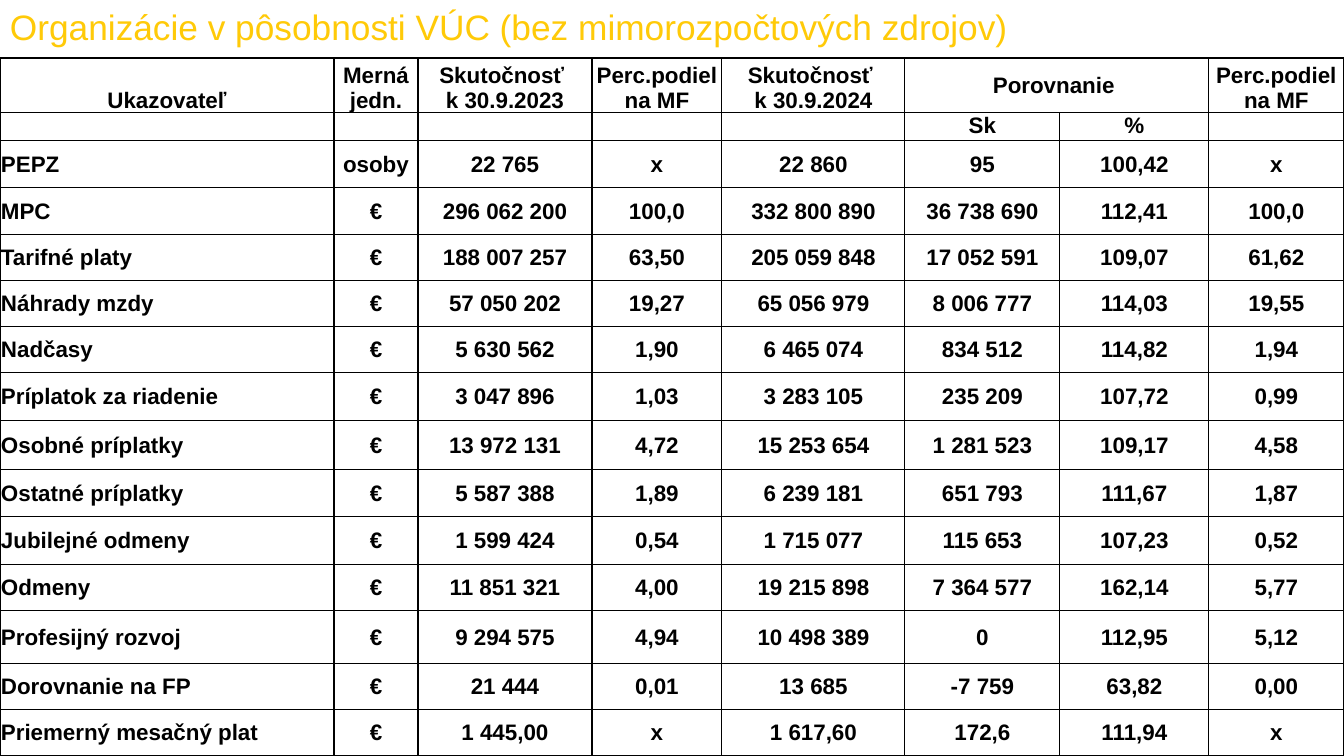
from lxml.etree import SubElement
from pptx import Presentation
from pptx.dml.color import RGBColor
from pptx.enum.text import MSO_ANCHOR, PP_ALIGN
from pptx.oxml.ns import qn
from pptx.util import Pt

EMU_PER_PX = 914400 / 100.8
COLUMN_WIDTHS = [334, 84, 174, 130, 183, 155, 149, 135]
ROW_HEIGHTS = [53, 27, 47, 47, 46, 46, 46, 48, 49, 47, 48, 46, 53, 46, 46]
HEADERS = [
    ["Ukazovateľ", "Merná jedn.", "Skutočnosť \nk 30.9.2023", "Perc.podiel na MF",
     "Skutočnosť \nk 30.9.2024", "Porovnanie ", "", "Perc.podiel na MF"],
    ["", "", "", "", "", "Sk", "%", ""],
]
INDICATORS = [
    ["PEPZ", "osoby", "22 765", "x", "22 860", "95", "100,42", "x"],
    ["MPC", "€", "296 062 200", "100,0", "332 800 890", "36 738 690", "112,41", "100,0"],
    ["Tarifné platy", "€", "188 007 257", "63,50", "205 059 848", "17 052 591", "109,07", "61,62"],
    ["Náhrady mzdy", "€", "57 050 202", "19,27", "65 056 979", "8 006 777", "114,03", "19,55"],
    ["Nadčasy", "€", "5 630 562", "1,90", "6 465 074", "834 512", "114,82", "1,94"],
    ["Príplatok za riadenie", "€", "3 047 896", "1,03", "3 283 105", "235 209", "107,72", "0,99"],
    ["Osobné príplatky", "€", "13 972 131", "4,72", "15 253 654", "1 281 523", "109,17", "4,58"],
    ["Ostatné príplatky", "€", "5 587 388", "1,89", "6 239 181", "651 793", "111,67", "1,87"],
    ["Jubilejné odmeny", "€", "1 599 424", "0,54", "1 715 077", "115 653", "107,23", "0,52"],
    ["Odmeny", "€", "11 851 321", "4,00", "19 215 898", "7 364 577", "162,14", "5,77"],
    ["Profesijný rozvoj", "€", "9 294 575", "4,94", "10 498 389", "0", "112,95", "5,12"],
    ["Dorovnanie na FP", "€", "21 444", "0,01", "13 685", "-7 759", "63,82", "0,00"],
    ["Priemerný mesačný plat", "€", "1 445,00", "x", "1 617,60", "172,6", "111,94", "x"],
]


def px(length):
    return round(length * EMU_PER_PX)


def color(value):
    return RGBColor.from_string(value)


class SlideBuilder:
    """Holds the style and the current slide, and draws its elements."""

    font = "Arial"
    ink = "000000"
    paper = "FFFFFF"
    accent = "FFCA08"

    def __init__(self, presentation):
        self.slide = presentation.slides.add_slide(presentation.slide_layouts[6])

    def format_text(self, text_frame, size, ink, bold, align):
        for paragraph in text_frame.paragraphs:
            paragraph.alignment = align
            for run in paragraph.runs:
                run.font.name = self.font
                run.font.size = Pt(size)
                run.font.bold = bold
                run.font.color.rgb = color(ink)
            if not paragraph.runs:
                SubElement(paragraph._p, qn("a:endParaRPr"), sz=str(size * 100))

    def title(self, text, left, top, width, height):
        shape = self.slide.shapes.add_textbox(px(left), px(top), px(width), px(height))
        text_frame = shape.text_frame
        text_frame.word_wrap = True
        text_frame.vertical_anchor = MSO_ANCHOR.MIDDLE
        text_frame.text = text
        self.format_text(text_frame, 25.2, self.accent, False, PP_ALIGN.LEFT)

    def border(self, cell):
        properties = cell._tc.get_or_add_tcPr()
        for side in ("lnL", "lnR", "lnT", "lnB"):
            line = SubElement(properties, qn(f"a:{side}"), w=str(Pt(1)))
            fill = SubElement(line, qn("a:solidFill"))
            SubElement(fill, qn("a:srgbClr"), val=self.ink)

    def cell(self, cell, text, anchor, align):
        self.border(cell)
        cell.fill.solid()
        cell.fill.fore_color.rgb = color(self.paper)
        cell.margin_left = cell.margin_right = cell.margin_top = px(1)
        cell.margin_bottom = 0
        cell.vertical_anchor = anchor
        cell.text_frame.text = text
        self.format_text(cell.text_frame, 16, self.ink, True, align)

    def table(self, rows, left, top, widths, heights):
        frame = self.slide.shapes.add_table(
            len(heights), len(widths), px(left), px(top), px(sum(widths)), px(sum(heights)))
        table = frame.table
        table.first_row = table.horz_banding = False
        for column, width in zip(table.columns, widths):
            column.width = px(width)
        for row, height in zip(table.rows, heights):
            row.height = px(height)
        anchors = {0: MSO_ANCHOR.BOTTOM, 1: MSO_ANCHOR.TOP}
        for row_index, row in enumerate(rows):
            for column_index, text in enumerate(row):
                anchor = anchors.get(row_index, MSO_ANCHOR.MIDDLE)
                is_label = column_index == 0 and row_index >= len(HEADERS)
                align = PP_ALIGN.LEFT if is_label else PP_ALIGN.CENTER
                self.cell(table.cell(row_index, column_index), text, anchor, align)
        return table


def main():
    presentation = Presentation()
    presentation.slide_width = px(1344)
    presentation.slide_height = px(756)
    builder = SlideBuilder(presentation)
    builder.title("Organizácie v pôsobnosti VÚC (bez mimorozpočtových zdrojov)", 0, 0, 1092, 52)
    table = builder.table(HEADERS + INDICATORS, 0, 58, COLUMN_WIDTHS, ROW_HEIGHTS)
    comparison = table.cell(0, 5)
    comparison.merge(table.cell(0, 6))
    comparison.vertical_anchor = MSO_ANCHOR.MIDDLE
    presentation.save("out.pptx")


if __name__ == "__main__":
    main()
